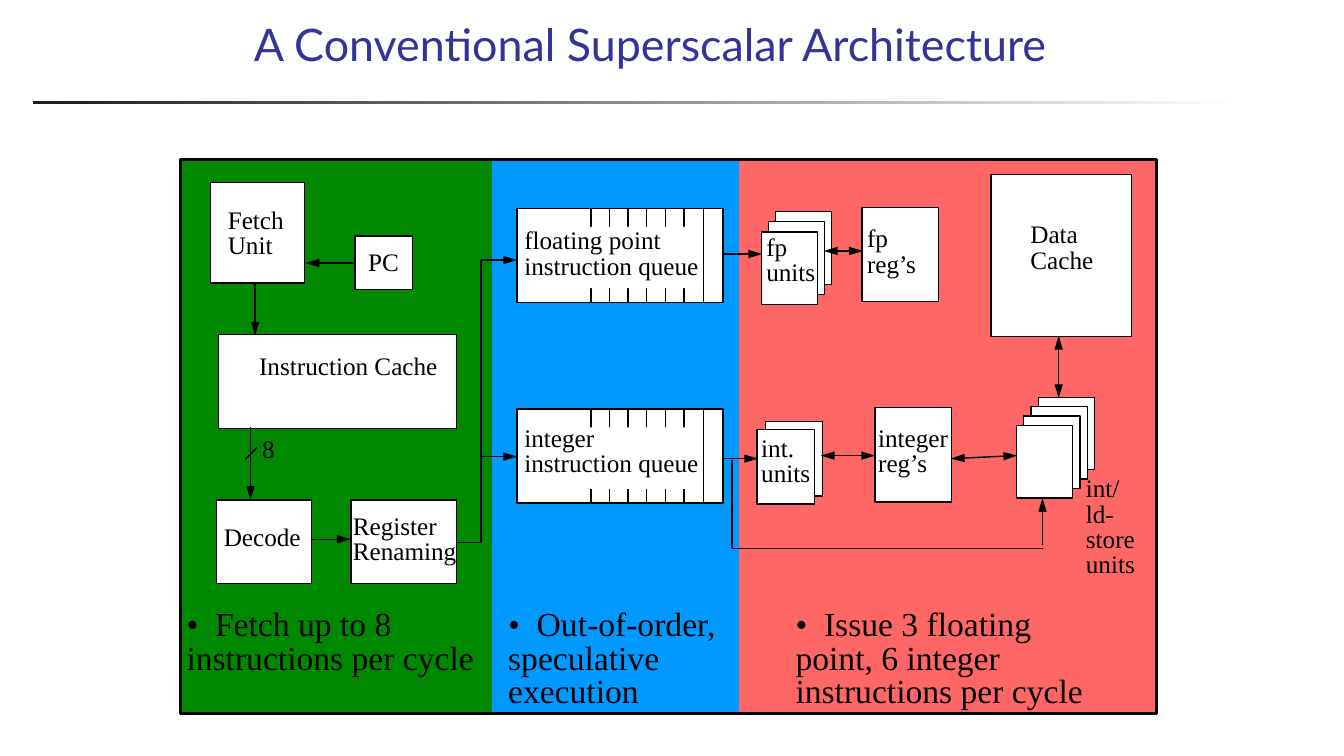
from dataclasses import dataclass
from typing import Optional

import pptx
import pptx.dml.color
import pptx.enum.shapes
import pptx.enum.text
import pptx.oxml
import pptx.oxml.ns
import pptx.util

RGB = pptx.dml.color.RGBColor
BLACK, WHITE = RGB(0, 0, 0), RGB(0xFF, 0xFF, 0xFF)
CHARCOAL, INDIGO = RGB(0x1C, 0x1C, 0x1C), RGB(0x33, 0x33, 0x99)
GREEN, BLUE, RED = RGB(0, 0x88, 0), RGB(0, 0x99, 0xFF), RGB(0xFF, 0x66, 0x66)

# The slide is a grid of 133.3 columns by 75 rows
COLUMNS, ROWS = 133.3, 75
deck = pptx.Presentation()
deck.slide_width = pptx.util.Inches(13.33)
deck.slide_height = pptx.util.Inches(7.5)
slide = deck.slides.add_slide(deck.slide_layouts[6])


@dataclass
class Box:
    col: float
    row: float
    cols: float
    rows: float
    fill: Optional[RGB] = WHITE
    line: Optional[RGB] = BLACK
    weight: float = 1


@dataclass
class Wire:
    start: tuple[float, float]
    end: tuple[float, float]
    arrow: str = ""  # any of "start", "end", "both"


@dataclass
class Label:
    text: str
    col: float
    row: float
    cols: float
    size: float = 18


def across(cols: float) -> int:
    return round(deck.slide_width * cols / COLUMNS)


def down(rows: float) -> int:
    return round(deck.slide_height * rows / ROWS)


def draw_box(box: Box):
    shape = slide.shapes.add_shape(
        pptx.enum.shapes.MSO_SHAPE.RECTANGLE,
        across(box.col), down(box.row), across(box.cols), down(box.rows))
    shape.shadow.inherit = False
    for paint, color in ((shape.fill, box.fill), (shape.line.fill, box.line)):
        if color is None:
            paint.background()
        else:
            paint.solid()
            paint.fore_color.rgb = color
    if box.line is not None:
        shape.line.width = pptx.util.Pt(box.weight)
    return shape


def draw_wire(wire: Wire) -> None:
    (x1, y1), (x2, y2) = wire.start, wire.end
    connector = slide.shapes.add_connector(
        pptx.enum.shapes.MSO_CONNECTOR.STRAIGHT,
        across(x1), down(y1), across(x2), down(y2))
    connector.line.color.rgb = BLACK
    connector.line.width = pptx.util.Pt(1)
    line = connector.line._get_or_add_ln()
    for tag, side in (("a:headEnd", "start"), ("a:tailEnd", "end")):
        if wire.arrow in (side, "both"):
            tip = pptx.oxml.ns.qn(tag)
            line.append(line.makeelement(tip, {"type": "triangle", "w": "med", "len": "lg"}))
    properties = connector._element.spPr
    properties.append(properties.makeelement(pptx.oxml.ns.qn("a:effectLst"), {}))


def write(text: str, col: float, row: float, cols: float, rows: float, *,
          size: float = 18, font: str = "Times New Roman", color: RGB = BLACK,
          inset: tuple[float, float] = (0, 0), wrap: bool = False, tight: bool = True,
          anchor=pptx.enum.text.MSO_ANCHOR.TOP) -> None:
    frame = slide.shapes.add_textbox(
        across(col), down(row), across(cols), down(rows)).text_frame
    frame.margin_left = frame.margin_right = across(inset[0])
    frame.margin_top = frame.margin_bottom = down(inset[1])
    frame.word_wrap = wrap
    frame.vertical_anchor = anchor
    paragraph = frame.paragraphs[0]
    paragraph.text = text
    if tight:
        paragraph.line_spacing = pptx.util.Pt(size)
    if "\t" in text:
        namespace = pptx.oxml.ns.nsdecls("a")
        paragraph._p.get_or_add_pPr().append(pptx.oxml.parse_xml(
            f'<a:tabLst {namespace}><a:tab pos="{across(2.83)}" algn="l"/></a:tabLst>'))
    for run in paragraph.runs:
        run.font.size = pptx.util.Pt(size)
        run.font.name = font
        run.font.color.rgb = color


def draw_queue(row: float) -> None:
    """Instruction queue whose slots show above and below its name."""
    draw_box(Box(51.3, row, 20.4, 9.3))
    for slot in range(6):
        x = 58.6 + 1.85 * slot
        draw_wire(Wire((x, row), (x, row + 9.3)))
    draw_box(Box(51.8, row + 1.8, 17.9, 6.1, line=None))
    draw_wire(Wire((69.8, row), (69.8, row + 9.3)))


def draw_stack(front: Box, count: int, step: tuple[float, float]) -> None:
    """Identical units, each one behind shifted right and up."""
    for depth in reversed(range(count)):
        draw_box(Box(front.col + depth * step[0], front.row - depth * step[1],
                     front.cols, front.rows))


# Title and fading rule
rule = draw_box(Box(3.3, 10, 120, 0.3, line=None))
rule.fill.gradient()
rule.fill.gradient_angle = 0
for stop, (position, shade) in zip(rule.fill.gradient_stops, ((0, CHARCOAL), (1, WHITE))):
    stop.position = position
    stop.color.rgb = shade
write("A Conventional Superscalar Architecture", 24.2, 2.5, 100, 5, size=32, font="Lato",
      color=INDIGO, inset=(1, 0.5), wrap=True, tight=False,
      anchor=pptx.enum.text.MSO_ANCHOR.BOTTOM)

# Pipeline stages: fetch, queue, issue
for stage in (Box(17.8, 15.9, 31.5, 54.9, GREEN, GREEN),
              Box(72.2, 16, 42.4, 54.9, RED, RED),
              Box(48.9, 15.7, 24.3, 55, BLUE, BLUE)):
    draw_box(stage)

# Single blocks
for block in (
    Box(20.9, 18.1, 9.3, 10),     # fetch unit
    Box(35.2, 23.4, 5.7, 5.3),    # program counter
    Box(21.7, 33.2, 23.6, 9.3),   # instruction cache
    Box(21.5, 49.6, 9.4, 8.3),    # decode
    Box(34.8, 49.6, 10.5, 8.3),   # register renaming
    Box(85.5, 20.6, 7.6, 9.3),    # floating point registers
    Box(86.8, 40.4, 7.6, 9.4),    # integer registers
    Box(98.3, 17.3, 13.9, 16.1),  # data cache
):
    draw_box(block)

# Queues and stacked units
for queue_row in (20.7, 40.6):
    draw_queue(queue_row)
draw_stack(Box(75.5, 23, 5.6, 7.2), 3, (0.7, 1))
draw_stack(Box(75.1, 42.6, 5.7, 7.4), 2, (0.8, 0.8))
draw_stack(Box(100.8, 42.2, 5.6, 7.2), 4, (0.73, 0.93))

# Data paths
for wire in (
    Wire((35.1, 26.1), (30.3, 26.1), "end"),       # PC to fetch
    Wire((25.3, 28.1), (25.3, 33.3), "end"),       # fetch to cache
    Wire((24.85, 42.4), (24.85, 49.6), "end"),     # cache to decode
    Wire((25.5, 44.4), (24.3, 45.6)),              # bus width stroke
    Wire((30.8, 53.5), (34.8, 53.5), "end"),       # decode to renaming
    Wire((45.2, 53.8), (47.7, 53.8)),              # renaming to queues
    Wire((47.7, 25.8), (47.7, 53.8)),
    Wire((47.7, 25.8), (51.3, 25.8), "end"),
    Wire((47.7, 45.3), (51.3, 45.3), "end"),
    Wire((71.6, 25.2), (75.6, 25.2), "end"),       # queues to units
    Wire((71.6, 45.5), (75.2, 45.5), "end"),
    Wire((72.6, 45.6), (72.6, 54.4)),              # integer queue to load/store
    Wire((72.6, 54.4), (103.4, 54.4)),
    Wire((103.4, 54.1), (103.4, 49.4), "end"),
    Wire((81.7, 24.9), (85.6, 24.9), "both"),      # units to registers
    Wire((81.4, 45.2), (86.8, 45.2), "both"),
    Wire((94.3, 45.5), (100.9, 45.2), "both"),     # registers to load/store
    Wire((105, 33.3), (105, 39.5), "both"),        # data cache to load/store
):
    draw_wire(wire)

# Names of the parts and notes on each stage
for label in (
    Label("Fetch\vUnit", 22.6, 20.8, 5.6),
    Label("PC", 36.5, 24.9, 3.1),
    Label("Instruction Cache", 25.7, 35.3, 17.9),
    Label("8", 26, 43.5, 1.3),
    Label("Decode", 22.2, 52.2, 7.7),
    Label("Register\vRenaming", 35, 51.1, 10.4),
    Label("floating point\vinstruction queue", 52, 22.8, 17.5),
    Label("integer\vinstruction queue", 52, 42.4, 17.5),
    Label("fp\vunits", 76, 23.4, 4.9),
    Label("int.\vunits", 75.5, 43.4, 4.9),
    Label("fp\vreg’s", 86, 22.6, 5),
    Label("integer\vreg’s", 87.1, 42.4, 7),
    Label("Data\vCache", 102.2, 22.2, 6.3),
    Label("int/ld-\vstore\vunits", 107.7, 47.4, 6.1),
    Label("•\tFetch up to 8\vinstructions per cycle", 18.5, 60.5, 28.8, 24),
    Label("•\tOut-of-order,\vspeculative\vexecution", 50.4, 60.5, 21.6, 24),
    Label("•\tIssue 3 floating\vpoint, 6 integer\vinstructions per cycle", 78.9, 60.5, 28.8, 24),
):
    line_count = label.text.count("\v") + 1
    write(label.text, label.col, label.row, label.cols,
          line_count * label.size / 7.2, size=label.size)

# Frame around the stages
draw_box(Box(17.9, 15.8, 96.8, 55, fill=None, weight=2))

deck.save("out.pptx")
